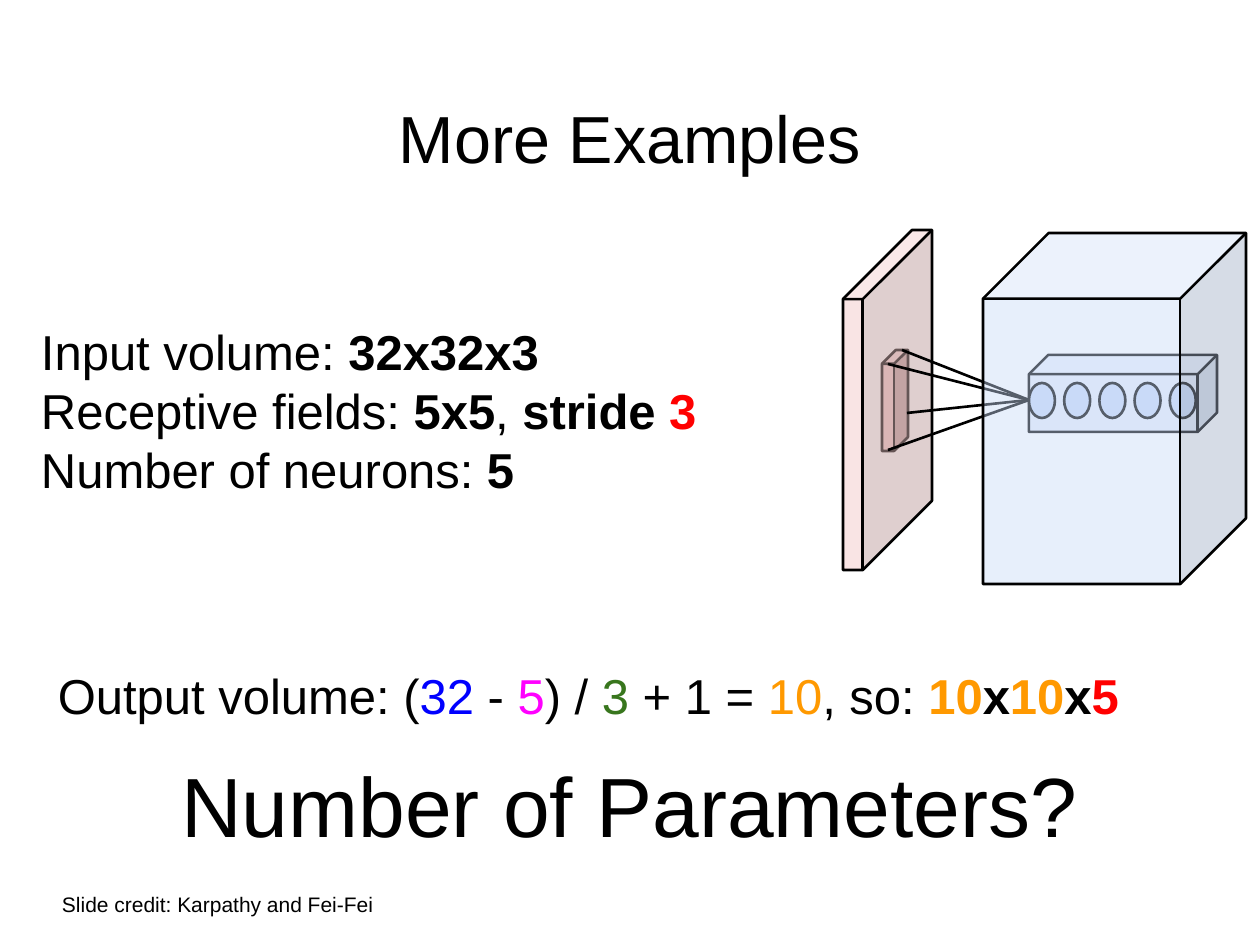
from lxml.etree import SubElement
from pptx import Presentation
from pptx.dml.color import RGBColor
from pptx.enum.shapes import MSO_CONNECTOR, MSO_SHAPE
from pptx.enum.text import MSO_ANCHOR, PP_ALIGN
from pptx.oxml.ns import qn
from pptx.util import Pt

PX = 914400 / 126
BLACK, RED, ORANGE = "000000", "FF0000", "FF9900"
PINK, BLUE = "F4CCCC", "C9DAF8"

# Content: each paragraph is a list of (text, colour, bold) runs
TITLE = [[("More Examples", BLACK, False)]]
SETUP = [
    [("Input volume: ", BLACK, False), ("32x32x3", BLACK, True)],
    [("Receptive fields: ", BLACK, False), ("5x5", BLACK, True), (", ", BLACK, False),
     ("stride ", BLACK, True), ("3", RED, True)],
    [("Number of neurons: ", BLACK, False), ("5", BLACK, True)],
]
OUTPUT = [[
    ("Output volume: (", BLACK, False), ("32 ", "0000FF", False), ("- ", BLACK, False),
    ("5", "FF00FF", False), (") / ", BLACK, False), ("3 ", "38761D", False),
    ("+ 1 = ", BLACK, False), ("10", ORANGE, False), (", so: ", BLACK, False),
    ("10", ORANGE, True), ("x", BLACK, True), ("10", ORANGE, True),
    ("x", BLACK, True), ("5", RED, True),
]]
QUESTION = [[("Number of Parameters?", BLACK, False)]]
CREDIT = [[("Slide credit: Karpathy and Fei-Fei", BLACK, False)]]

# Text boxes: paragraphs, box, size, alignment, (side, top) insets
TEXTS = [
    (SETUP, (28, 309, 823, 199), 28, PP_ALIGN.LEFT, (13, 13)),
    (OUTPUT, (45, 659, 1246, 72), 28, PP_ALIGN.LEFT, (13, 6)),
    (QUESTION, (140, 748, 979, 115), 48, PP_ALIGN.CENTER, (13, 6)),
    (CREDIT, (49, 886, 1110, 38), 12, PP_ALIGN.LEFT, (13, 6)),
]

# Cubes: box, depth, colour, opacity in percent
PATCH = ((882, 350, 26, 101), 0.534, PINK, 100)
NEURON_ROW = ((1029, 355, 188, 77), 0.25, BLUE, 43)
INPUT_VOLUME = ((843, 230, 89, 340), 0.777, PINK, 52)
OUTPUT_VOLUME = ((983, 233, 263, 351), 0.25, BLUE, 43)

NEURONS, NEURON_BOX, NEURON_STEP = 5, (1029, 383, 26, 35), 35.2
PATCH_CORNERS = [(888, 450), (888, 364), (902, 350), (907, 413)]
FIRST_NEURON = (1029, 400)


def emu(*values):
    return [round(v * PX) for v in values]


def rgb(color):
    return RGBColor.from_string(color)


def write(tf, paragraphs, size, align, spacing=None):
    tf.word_wrap = True
    for i, runs in enumerate(paragraphs):
        p = tf.add_paragraph() if i else tf.paragraphs[0]
        p.alignment = align
        if spacing:
            p.line_spacing = spacing
        for text, color, bold in runs:
            r = p.add_run()
            r.text = text
            r.font.name, r.font.size, r.font.bold = "Arial", Pt(size), bold
            r.font.color.rgb = rgb(color)


def outline(line):
    line.color.rgb = rgb(BLACK)
    line.width = Pt(1.5)


def add_solid(s, kind, box, color, opacity=100):
    sp = s.shapes.add_shape(kind, *emu(*box))
    sp.shadow.inherit = False
    sp.fill.solid()
    sp.fill.fore_color.rgb = rgb(color)
    outline(sp.line)
    if opacity < 100:
        clr = sp._element.spPr.find(qn("a:solidFill")).find(qn("a:srgbClr"))
        SubElement(clr, qn("a:alpha")).set("val", str(opacity * 1000))
    return sp


def add_cube(s, box, depth, color, opacity):
    add_solid(s, MSO_SHAPE.CUBE, box, color, opacity).adjustments[0] = depth


def main():
    prs = Presentation()
    prs.slide_width, prs.slide_height = emu(1260, 945)
    s = prs.slides.add_slide(prs.slide_layouts[5])

    # Title
    title = s.shapes.title
    title.left, title.top, title.width, title.height = emu(87, 50, 1086, 183)
    title.text_frame.vertical_anchor = MSO_ANCHOR.MIDDLE
    write(title.text_frame, TITLE, 38, PP_ALIGN.CENTER, 0.9)

    # Text
    for paragraphs, box, size, align, (side, top) in TEXTS:
        tf = s.shapes.add_textbox(*emu(*box)).text_frame
        tf.margin_left, tf.margin_right = emu(side, side)
        tf.margin_top, tf.margin_bottom = emu(top, top)
        write(tf, paragraphs, size, align)

    # Input volume with its receptive field, and the row of neurons
    for cube in (PATCH, NEURON_ROW, INPUT_VOLUME):
        add_cube(s, *cube)
    x, y, w, h = NEURON_BOX
    for i in range(NEURONS):
        add_solid(s, MSO_SHAPE.OVAL, (x + i * NEURON_STEP, y, w, h), BLUE)

    # Lines from the receptive field to the first neuron
    for corner in PATCH_CORNERS:
        line = s.shapes.add_connector(MSO_CONNECTOR.STRAIGHT, *emu(*corner, *FIRST_NEURON))
        outline(line.line)
        SubElement(line._element.spPr, qn("a:effectLst"))

    # Translucent output volume in front
    add_cube(s, *OUTPUT_VOLUME)

    prs.save("out.pptx")


if __name__ == "__main__":
    main()
